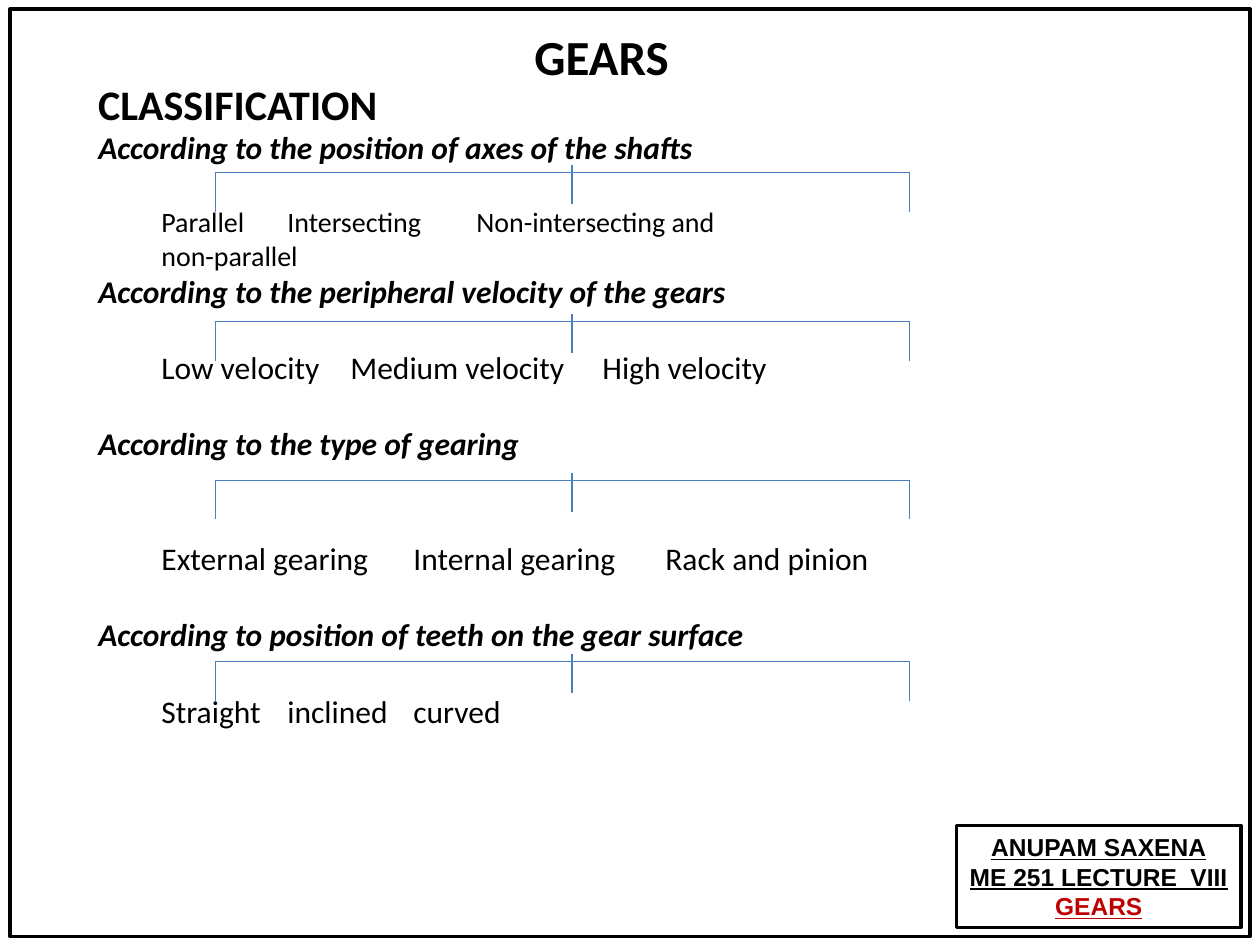
from lxml.etree import SubElement
from pptx import Presentation
from pptx.dml.color import RGBColor
from pptx.enum.shapes import MSO_CONNECTOR as Connector, MSO_SHAPE as Shape
from pptx.enum.text import MSO_ANCHOR as Anchor, MSO_AUTO_SIZE as AutoSize, PP_ALIGN as Align
from pptx.oxml.ns import qn
from pptx.util import Cm, Pt

COLOURS = {"ink": "000000", "accent": "C00000", "branch": "4B7EBC"}
LINE_STEP = 22
BRANCH_TOPS = (3.48, 6.48, 9.68, 13.34)
CLASSES = (
    ("According to the position of axes of the shafts", 0, 16, 1, (
        (("Parallel", 2.35), ("Intersecting", 9.51), ("Non-intersecting and", 16.57)),
        (("non-parallel", 16.48),))),
    ("According to the peripheral velocity of the gears", 0, 18, 1, (
        (("Low velocity", 2.74), ("Medium velocity", 9.93), ("High velocity", 16.63)),)),
    ("According to the type of gearing", 1, 18, 2, (
        (("External gearing", 3.08), ("Internal gearing", 9.79), ("Rack and pinion", 15.88)),)),
    ("According to position of teeth on the gear surface", 1, 18, 1, (
        (("Straight", 3.02), ("inclined", 9.47), ("curved", 16.36)),)),
)


def colour(name):
    """Return the named colour."""
    return RGBColor.from_string(COLOURS[name])


def place(shape, left, top, width, height):
    """Move and size a shape, in centimetres."""
    shape.left, shape.top = Cm(left), Cm(top)
    shape.width, shape.height = Cm(width), Cm(height)


def add_run(paragraph, text, size, font="Calibri", ink="ink", bold=False, italic=False, underline=False):
    """Append one formatted run."""
    run = paragraph.add_run()
    run.text = text
    run.font.name, run.font.size = font, Pt(size)
    run.font.bold, run.font.italic, run.font.underline = bold, italic, underline
    run.font.color.rgb = colour(ink)


def add_box(slide, left, top, width, height):
    """Draw an unfilled box with a black outline."""
    shape = slide.shapes.add_shape(Shape.RECTANGLE, Cm(left), Cm(top), Cm(width), Cm(height))
    shape.shadow.inherit = False
    shape.fill.background()
    shape.line.color.rgb = colour("ink")
    shape.line.width = Pt(2)
    return shape


def add_heading(shape, text, size, left, top, width, height):
    """Write a one-line bold heading in the given box."""
    place(shape, left, top, width, height)
    frame = shape.text_frame
    frame.word_wrap = False
    frame.auto_size = AutoSize.SHAPE_TO_FIT_TEXT
    frame.vertical_anchor = Anchor.TOP
    frame.paragraphs[0].alignment = Align.LEFT
    add_run(frame.paragraphs[0], text, size, bold=True)


def add_line(frame, blank_lines, tabs=()):
    """Append an unbulleted paragraph with centred tab stops."""
    paragraph = frame.paragraphs[0]
    if paragraph.runs:
        paragraph = frame.add_paragraph()
    properties = paragraph._p.get_or_add_pPr()
    properties.set("marL", "0")
    properties.set("indent", "0")
    SubElement(properties, qn("a:buNone"))
    if tabs:
        tab_list = SubElement(properties, qn("a:tabLst"))
        for position in tabs:
            SubElement(tab_list, qn("a:tab"), pos=str(int(Cm(position))), algn="ctr")
    paragraph.space_before = Pt(blank_lines * LINE_STEP)
    return paragraph


def fill_classes(shape, left, top, width, height):
    """List every classification and its kinds in the body."""
    place(shape, left, top, width, height)
    frame = shape.text_frame
    frame.word_wrap = True
    frame.auto_size = AutoSize.SHAPE_TO_FIT_TEXT
    frame.vertical_anchor = Anchor.TOP
    for heading, heading_gap, size, kinds_gap, rows in CLASSES:
        add_run(add_line(frame, heading_gap), heading, 18, bold=True, italic=True)
        for index, row in enumerate(rows):
            gap = 0 if index else kinds_gap
            paragraph = add_line(frame, gap, [position for _, position in row])
            for label, _ in row:
                add_run(paragraph, "\t" + label, size)


def add_branch(slide, left, top, width, drop):
    """Draw a bar with three drops, grouped."""
    group = slide.shapes.add_group_shape()
    right, middle, rise = left + width, left + 7.19, 0.15
    for x1, y1, x2, y2 in (
        (left, top, right, top),
        (left, top, left, top + drop),
        (middle, top - rise, middle, top - rise + drop),
        (right, top, right, top + drop),
    ):
        line = group.shapes.add_connector(Connector.STRAIGHT, Cm(x1), Cm(y1), Cm(x2), Cm(y2))
        line.line.color.rgb = colour("branch")
        line.line.width = Pt(0.75)
        SubElement(line._element.spPr, qn("a:effectLst"))


def add_lecture_label(slide, left, top, width, height):
    """Add the boxed lecture label."""
    frame = add_box(slide, left, top, width, height).text_frame
    frame.word_wrap = False
    frame.vertical_anchor = Anchor.MIDDLE
    lines = (("ANUPAM SAXENA", "ink"), ("ME 251 LECTURE  VIII", "ink"), ("GEARS", "accent"))
    for index, (text, ink) in enumerate(lines):
        paragraph = frame.add_paragraph() if index else frame.paragraphs[0]
        paragraph.alignment = Align.CENTER
        add_run(paragraph, text, 14, font="Arial", ink=ink, bold=True, underline=True)


def main():
    """Build and save the gears slide."""
    presentation = Presentation()
    presentation.slide_width, presentation.slide_height = Cm(25.4), Cm(19.05)
    slide = presentation.slides.add_slide(presentation.slide_layouts[1])
    add_box(slide, 0.2, 0.18, 25, 18.7)
    add_lecture_label(slide, 19.28, 16.64, 5.74, 2.06)
    add_heading(slide.shapes.title, "GEARS", 28, 10.52, 0.41, 3.25, 1.45)
    fill_classes(slide.placeholders[1], 1.73, 2.46, 21.67, 12.4)
    subtitle = slide.shapes.add_textbox(0, 0, 0, 0)
    add_heading(subtitle, "CLASSIFICATION", 24, 1.73, 1.45, 6.2, 1.27)
    for top in BRANCH_TOPS:
        add_branch(slide, 4.34, top, 14, 0.79)
    presentation.save("out.pptx")


if __name__ == "__main__":
    main()
